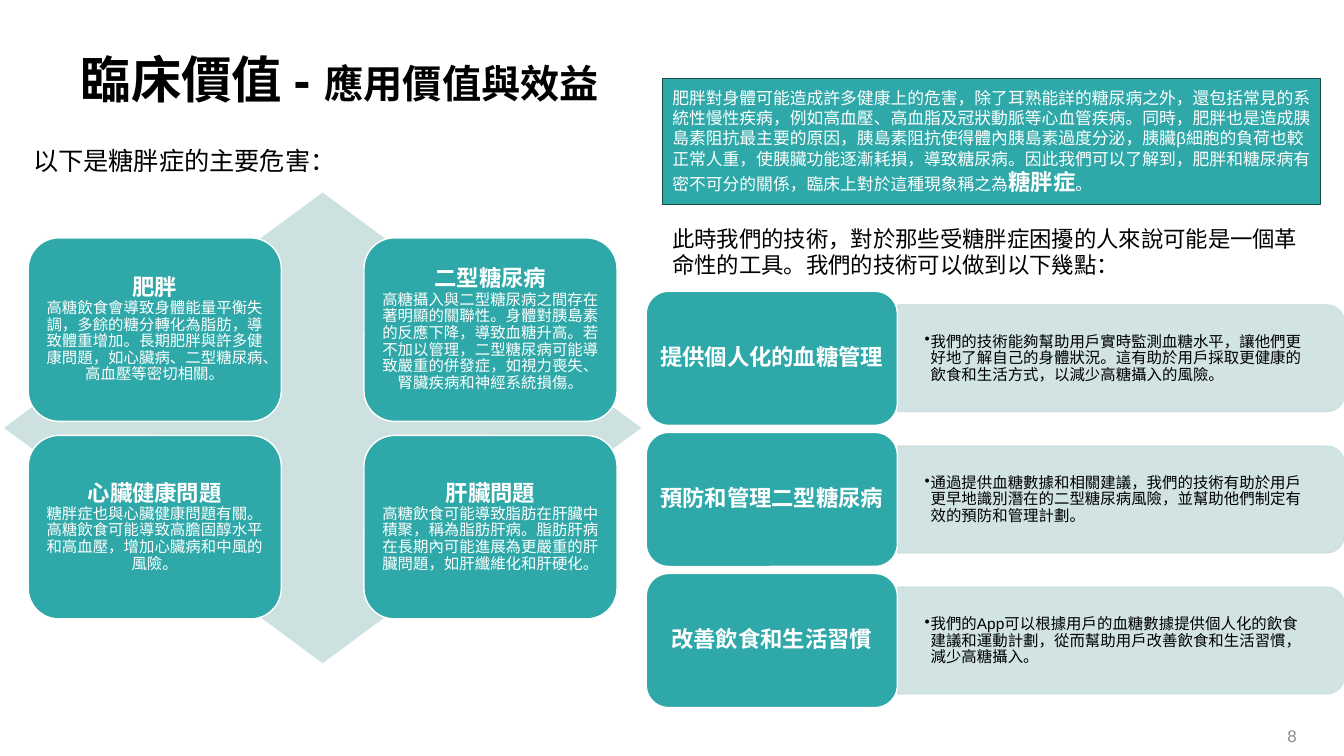
import dataclasses
import typing

import pptx
import pptx.dml.color
import pptx.enum.shapes
import pptx.enum.text
import pptx.oxml.ns
import pptx.util
from lxml import etree

Inches = pptx.util.Inches
Pt = pptx.util.Pt
Kind = pptx.enum.shapes.MSO_SHAPE
Align = pptx.enum.text.PP_ALIGN
Anchor = pptx.enum.text.MSO_ANCHOR

TEAL, PALE, EDGE = "2EA8A8", "CDE1E1", "144A4A"
WHITE, BLACK, GRAY = "FFFFFF", "000000", "8C8C8C"


@dataclasses.dataclass
class Card:
    head: str
    body: str


@dataclasses.dataclass
class Step:
    head: str
    body: str


CARDS = [
    Card("肥胖", "高糖飲食會導致身體能量平衡失調，多餘的糖分轉化為脂肪，導致體重增加。長期肥胖與許多健康問題，如心臟病、二型糖尿病、高血壓等密切相關。"),
    Card("二型糖尿病", "高糖攝入與二型糖尿病之間存在著明顯的關聯性。身體對胰島素的反應下降，導致血糖升高。若不加以管理，二型糖尿病可能導致嚴重的併發症，如視力喪失、腎臟疾病和神經系統損傷。"),
    Card("心臟健康問題", "糖胖症也與心臟健康問題有關。高糖飲食可能導致高膽固醇水平和高血壓，增加心臟病和中風的風險。"),
    Card("肝臟問題", "高糖飲食可能導致脂肪在肝臟中積聚，稱為脂肪肝病。脂肪肝病在長期內可能進展為更嚴重的肝臟問題，如肝纖維化和肝硬化。"),
]

STEPS = [
    Step("提供個人化的血糖管理", "我們的技術能夠幫助用戶實時監測血糖水平，讓他們更好地了解自己的身體狀況。這有助於用戶採取更健康的飲食和生活方式，以減少高糖攝入的風險。"),
    Step("預防和管理二型糖尿病", "通過提供血糖數據和相關建議，我們的技術有助於用戶更早地識別潛在的二型糖尿病風險，並幫助他們制定有效的預防和管理計劃。"),
    Step("改善飲食和生活習慣", "我們的App可以根據用戶的血糖數據提供個人化的飲食建議和運動計劃，從而幫助用戶改善飲食和生活習慣，減少高糖攝入。"),
]


def color(code: str) -> pptx.dml.color.RGBColor:
    return pptx.dml.color.RGBColor.from_string(code)


def style(font: typing.Any, size: float, code: str, bold: bool = False) -> None:
    font.name = "Arial"
    font.size = Pt(size)
    font.bold = bold
    font.color.rgb = color(code)


def shape(slide: typing.Any, kind: typing.Any, box: tuple, fill: str,
          line: typing.Optional[str] = None) -> typing.Any:
    form = slide.shapes.add_shape(kind, *map(Inches, box))
    form.shadow.inherit = False
    form.fill.solid()
    form.fill.fore_color.rgb = color(fill)
    if line:
        form.line.color.rgb = color(line)
        form.line.width = Pt(1)
    else:
        form.line.fill.background()
    return form


def setup(form: typing.Any, side: float = 0.1, edge: float = 0.05,
          anchor: typing.Any = Anchor.MIDDLE) -> typing.Any:
    frame = form.text_frame
    frame.word_wrap = True
    frame.vertical_anchor = anchor
    frame.margin_left = frame.margin_right = Inches(side)
    frame.margin_top = frame.margin_bottom = Inches(edge)
    return frame


def write(para: typing.Any, text: str, size: float, code: str,
          bold: bool = False, align: typing.Any = Align.LEFT,
          space: float = 1.0) -> None:
    para.text = text
    para.alignment = align
    para.line_spacing = space
    style(para.font, size, code, bold)


def label(slide: typing.Any, box: tuple, text: str, size: float) -> None:
    form = slide.shapes.add_textbox(*map(Inches, box))
    write(setup(form, anchor=Anchor.TOP).paragraphs[0], text, size, BLACK)


def fade(form: typing.Any) -> None:
    for node in form._element.spPr.iter(pptx.oxml.ns.qn("a:srgbClr")):
        etree.SubElement(node, pptx.oxml.ns.qn("a:alpha"), val="90000")


def bullet(para: typing.Any) -> None:
    props = para._p.get_or_add_pPr()
    props.set("marL", str(Inches(0.06)))
    props.set("indent", str(Inches(-0.06)))
    etree.SubElement(props, pptx.oxml.ns.qn("a:buChar"), char="•")


def title(slide: typing.Any) -> None:
    form = slide.shapes.title
    form.left, form.top, form.width, form.height = map(
        Inches, (0.7, 0.4, 12.27, 0.76))
    frame = setup(form)
    frame.auto_size = pptx.enum.text.MSO_AUTO_SIZE.NONE
    para = frame.paragraphs[0]
    para.alignment = Align.LEFT
    style(para.font, 36, BLACK, True)
    for text, size in (("臨床價值 - ", 36), ("應用價值與效益", 28)):
        run = para.add_run()
        run.text = text
        run.font.size = Pt(size)


def harms(slide: typing.Any) -> None:
    label(slide, (0.23, 1.39, 6.67, 0.4), "以下是糖胖症的主要危害：", 18)
    shape(slide, Kind.DIAMOND, (0.04, 1.91, 6.32, 4.67), PALE)
    for num, card in enumerate(CARDS):
        row, col = divmod(num, 2)
        box = (0.28 + 3.33 * col, 2.36 + 1.96 * row, 2.51, 1.82)
        form = shape(slide, Kind.ROUNDED_RECTANGLE, box, TEAL, WHITE)
        frame = setup(form, 0.07, 0.07)
        write(frame.paragraphs[0], card.head, 16, WHITE, True,
              Align.CENTER, 0.9)
        write(frame.add_paragraph(), card.body, 11, WHITE, False,
              Align.CENTER, 0.9)


def intro(slide: typing.Any) -> None:
    form = shape(slide, Kind.RECTANGLE, (6.57, 0.78, 6.53, 1.25), TEAL, EDGE)
    para = setup(form).paragraphs[0]
    para.alignment = Align.LEFT
    style(para.font, 12, WHITE)
    for text, key in (
        ("肥胖對身體可能造成許多健康上的危害，除了耳熟能詳的糖尿病之外，還包括常見的系統性慢性疾病，例如高血壓、高血脂及冠狀動脈等心血管疾病。同時，肥胖也是造成胰島素阻抗最主要的原因，胰島素阻抗使得體內胰島素過度分泌，胰臟β細胞的負荷也較正常人重，使胰臟功能逐漸耗損，導致糖尿病。因此我們可以了解到，肥胖和糖尿病有密不可分的關係，臨床上對於這種現象稱之為", False),
        ("糖胖症", True),
        ("。", False),
    ):
        run = para.add_run()
        run.text = text
        style(run.font, 16 if key else 12, WHITE, key)
    label(slide, (6.57, 2.18, 6.43, 0.64), "此時我們的技術，對於那些受糖胖症困擾的人來說可能是一個革命性的工具。我們的技術可以做到以下幾點：", 16)


def steps(slide: typing.Any) -> None:
    for num, step in enumerate(STEPS):
        top = 2.89 + 1.4 * num
        bar = shape(slide, Kind.ROUND_2_SAME_RECTANGLE,
                    (10.59, top - 1.55, 1.06, 4.43), PALE, PALE)
        bar.rotation = 90
        fade(bar)
        note = slide.shapes.add_textbox(
            *map(Inches, (8.9, top + 0.19, 4.38, 0.96)))
        para = setup(note, 0.27, 0.14).paragraphs[0]
        para.line_spacing = 0.9
        bullet(para)
        write(para, step.body, 11, BLACK, space=0.9)
        tab = shape(slide, Kind.ROUNDED_RECTANGLE,
                    (6.41, top, 2.49, 1.33), TEAL, WHITE)
        write(setup(tab, 0.07, 0.03).paragraphs[0], step.head, 16, WHITE,
              True, Align.CENTER, 0.9)


def main() -> None:
    deck = pptx.Presentation()
    deck.slide_width, deck.slide_height = Inches(13.33), Inches(7.5)
    slide = deck.slides.add_slide(deck.slide_layouts[5])
    title(slide)
    harms(slide)
    intro(slide)
    steps(slide)
    page = slide.shapes.add_textbox(*map(Inches, (11.6, 7.1, 1.36, 0.4)))
    write(setup(page).paragraphs[0], "8", 12, GRAY, align=Align.RIGHT)
    deck.save("out.pptx")


if __name__ == "__main__":
    main()
